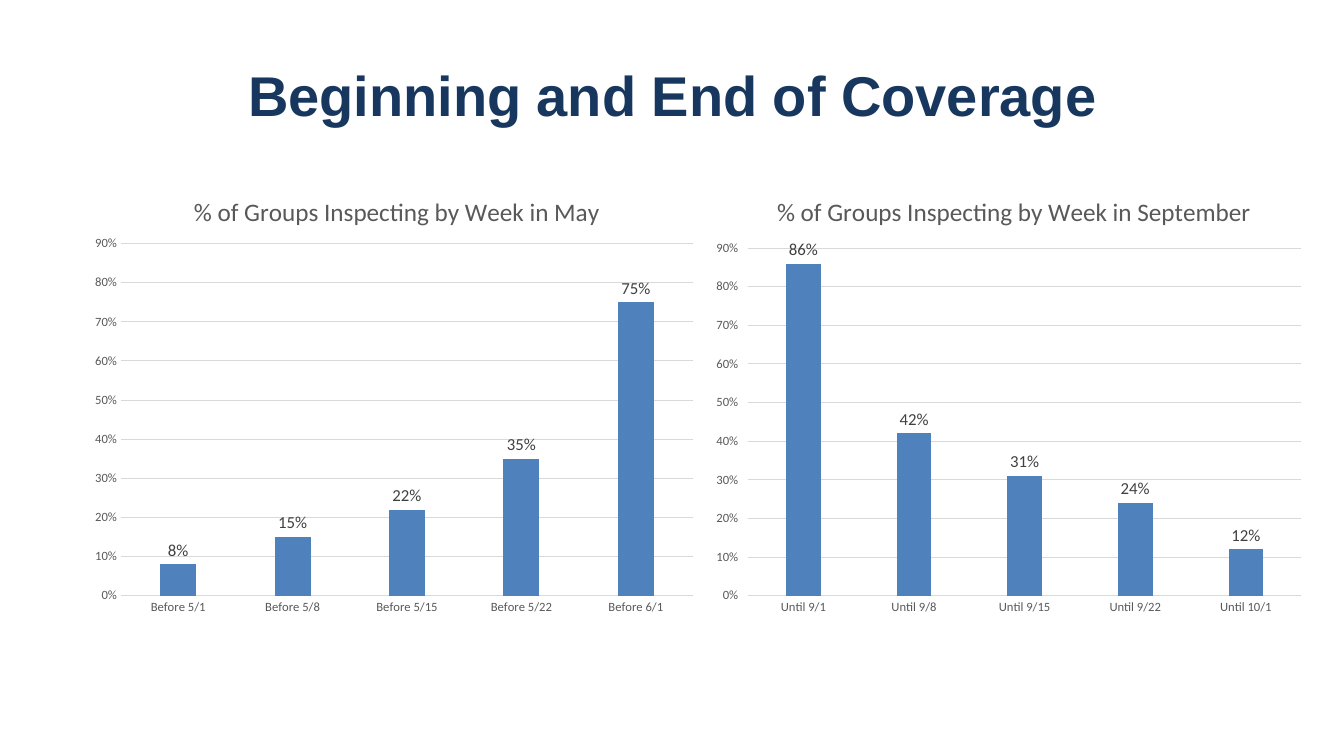
"""Builds a slide comparing inspection coverage in May and September."""
import lxml.etree
import pptx
import pptx.chart.data
import pptx.dml.color
import pptx.enum.chart
import pptx.enum.text
import pptx.oxml.ns
import pptx.util

Pt = pptx.util.Pt
qn = pptx.oxml.ns.qn
TICK = pptx.enum.chart.XL_TICK_MARK
CHART_TOP, CHART_HEIGHT = 122.4, 322.56


def color(value):
    """Return the colour for a hex string."""
    return pptx.dml.color.RGBColor.from_string(value)


def style_font(font, name, size, value, bold=False):
    """Set the look of a font."""
    font.name, font.size, font.bold = name, Pt(size), bold
    font.color.rgb = color(value)


def style_line(line):
    """Give a line the pale grey of axis and grid."""
    line.color.rgb = color("D9D9D9")
    line.width = Pt(0.75)


def set_layout(element, index, **fractions):
    """Place a chart part by fractions of the chart area."""
    for old in element.findall(qn("c:layout")):
        element.remove(old)
    layout = lxml.etree.Element(qn("c:layout"))
    manual = lxml.etree.SubElement(layout, qn("c:manualLayout"))
    settings = {"xMode": "edge", "yMode": "edge", **fractions}
    if "w" in fractions:
        settings = {"layoutTarget": "inner", **settings}
    for tag, value in settings.items():
        lxml.etree.SubElement(manual, qn(f"c:{tag}")).set("val", str(value))
    element.insert(index, layout)


def add_heading(page, text):
    """Add the centred slide heading."""
    box = page.shapes.add_textbox(Pt(66.24), Pt(28.8), Pt(828), Pt(76.32))
    frame = box.text_frame
    frame.word_wrap = True
    frame.vertical_anchor = pptx.enum.text.MSO_ANCHOR.MIDDLE
    para = frame.paragraphs[0]
    para.text = text
    para.alignment = pptx.enum.text.PP_ALIGN.CENTER
    style_font(para.font, "Arial", 40, "17375E", True)


def style_axes(chart, tick):
    """Format the category and percentage axes."""
    for axis in (chart.category_axis, chart.value_axis):
        axis.major_tick_mark = axis.minor_tick_mark = TICK.NONE
        style_font(axis.tick_labels.font, "Calibri", 9, "595959")
    style_line(chart.category_axis.format.line)
    values = chart.value_axis
    values.major_tick_mark = tick
    values.minimum_scale, values.maximum_scale = 0, 0.9
    values.major_unit = 0.1
    values.tick_labels.number_format = "0%"
    values.tick_labels.number_format_is_linked = False
    values.format.line.fill.background()
    style_line(values.major_gridlines.format.line)


def style_columns(plot):
    """Format the columns and their percentage labels."""
    plot.gap_width, plot.overlap = 219, -27
    plot.vary_by_categories = False
    series = plot.series[0]
    series.format.fill.solid()
    series.format.fill.fore_color.rgb = color("4F81BD")
    labels = series.data_labels
    labels.show_value = True
    labels.number_format, labels.number_format_is_linked = "0%", False
    labels.position = pptx.enum.chart.XL_LABEL_POSITION.OUTSIDE_END
    style_font(labels.font, "Calibri", 12, "404040")


def add_column_chart(page, left, width, month, weeks, shares, tick, title_place, plot_place):
    """Add a column chart of weekly shares for one month."""
    content = pptx.chart.data.CategoryChartData(number_format="0%")
    content.categories = weeks
    content.add_series("Series 1", shares)
    chart = page.shapes.add_chart(
        pptx.enum.chart.XL_CHART_TYPE.COLUMN_CLUSTERED,
        Pt(left), Pt(CHART_TOP), Pt(width), Pt(CHART_HEIGHT), content,
    ).chart
    chart.has_legend = False
    style_font(chart.font, "Calibri", 10, "000000")
    chart.has_title = True
    para = chart.chart_title.text_frame.paragraphs[0]
    para.text = f"% of Groups Inspecting by Week in {month}"
    style_font(para.font, "Calibri", 18, "595959")
    style_axes(chart, tick)
    style_columns(chart.plots[0])
    area = chart.element.find(".//" + qn("c:plotArea"))
    set_layout(chart.element.find(".//" + qn("c:title")), 1, **title_place)
    set_layout(area, 0, **plot_place)


def main():
    """Build and save the deck."""
    deck = pptx.Presentation()
    deck.slide_width, deck.slide_height = Pt(960), Pt(540)
    page = deck.slides.add_slide(deck.slide_layouts[6])
    add_heading(page, "Beginning and End of Coverage")
    add_column_chart(
        page, 504, 434.16, "September",
        [f"Until {day}" for day in ("9/1", "9/8", "9/15", "9/22", "10/1")],
        (0.86, 0.42, 0.31, 0.24, 0.12), TICK.OUTSIDE,
        {"x": 0.11, "y": 0.04}, {"x": 0.07, "y": 0.17, "w": 0.91, "h": 0.77},
    )
    add_column_chart(
        page, 59.76, 444.24, "May",
        [f"Before {day}" for day in ("5/1", "5/8", "5/15", "5/22", "6/1")],
        (0.08, 0.15, 0.22, 0.35, 0.75), TICK.NONE,
        {"x": 0.17, "y": 0.04}, {"x": 0.06, "y": 0.16, "w": 0.92, "h": 0.78},
    )
    deck.save("out.pptx")


if __name__ == "__main__":
    main()
